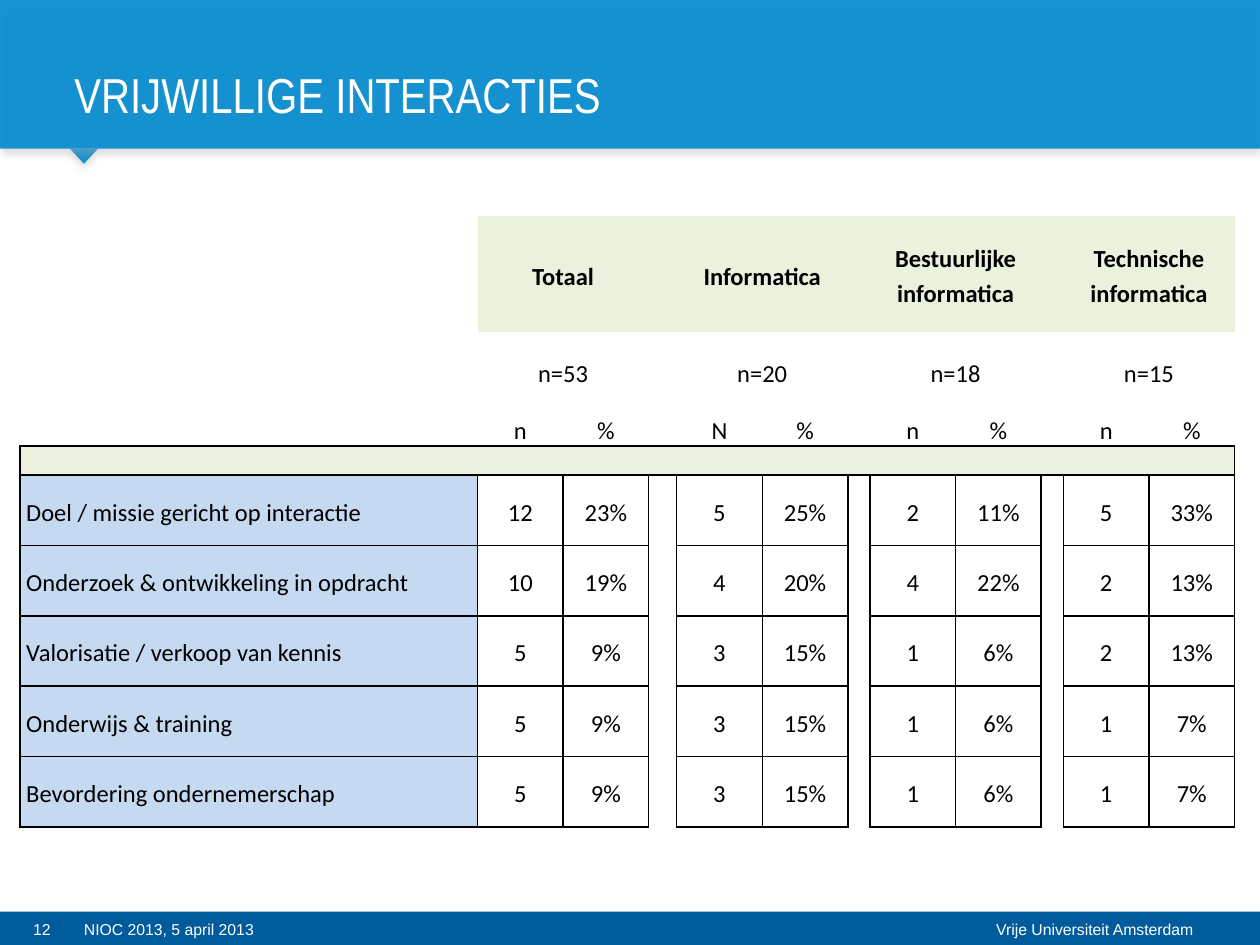
from lxml.etree import SubElement
from pptx import Presentation
from pptx.dml.color import RGBColor
from pptx.enum.shapes import MSO_SHAPE
from pptx.enum.text import MSO_ANCHOR, PP_ALIGN
from pptx.oxml.ns import qn
from pptx.util import Pt

BLACK, WHITE = "000000", "FFFFFF"
HEADER_GREEN, BAND_GREEN, LABEL_BLUE = "EAF1DD", "EBF1DE", "C5D9F1"
TITLE_BLUE, FOOTER_BLUE = "0089CF", "005B9D"

FOOTER_FONT = {"name": "Arial", "size": Pt(9)}
TITLE_FONT = {"name": "Arial Narrow", "size": Pt(28)}
TABLE_FONT = {"name": "Calibri", "size": Pt(14)}

GROUPS = [
    ("Totaal", "n=53", "n"),
    ("Informatica", "n=20", "N"),
    ("Bestuurlijke informatica", "n=18", "n"),
    ("Technische informatica", "n=15", "n"),
]
GROUP_COLUMNS = [1, 4, 7, 10]
GAP_COLUMNS = [3, 6, 9]
BAND_ROW = 3
FIRST_DATA_ROW = 4
COLUMN_WIDTHS = [261.5, 48.9, 48.9, 16, 48.9, 48.9, 12.7, 48.9, 48.9, 12.7, 48.9, 48.9]
ROW_HEIGHTS = [66.3, 32.5, 32.5, 16.6] + [40.2] * 5
DATA = [
    ("Doel / missie gericht op interactie", [(12, 23), (5, 25), (2, 11), (5, 33)]),
    ("Onderzoek & ontwikkeling in opdracht", [(10, 19), (4, 20), (4, 22), (2, 13)]),
    ("Valorisatie / verkoop van kennis", [(5, 9), (3, 15), (1, 6), (2, 13)]),
    ("Onderwijs & training", [(5, 9), (3, 15), (1, 6), (1, 7)]),
    ("Bevordering ondernemerschap", [(5, 9), (3, 15), (1, 6), (1, 7)]),
]


def rgb(color):
    return RGBColor.from_string(color)


def set_attributes(target, values):
    for name, value in values.items():
        setattr(target, name, value)


def write_text(frame, text, font, color, align=PP_ALIGN.LEFT, spacing=None):
    paragraph = frame.paragraphs[0]
    set_attributes(paragraph, {"alignment": align, "line_spacing": spacing})
    run = paragraph.add_run()
    run.text = text
    set_attributes(run.font, font)
    run.font.color.rgb = rgb(color)


def add_block(slide, kind, box, color):
    shape = slide.shapes.add_shape(kind, *map(Pt, box))
    shape.shadow.inherit = False
    shape.fill.solid()
    shape.fill.fore_color.rgb = rgb(color)
    shape.line.fill.background()
    return shape


def add_color(parent, color, alpha):
    element = SubElement(parent, qn("a:srgbClr"), val=color)
    SubElement(element, qn("a:alpha"), val=str(alpha * 1000))


def add_raised_block(slide, kind, box):
    shape = add_block(slide, kind, box, TITLE_BLUE)
    properties = shape._element.spPr
    fill_color = properties.find(qn("a:solidFill")).find(qn("a:srgbClr"))
    SubElement(fill_color, qn("a:alpha"), val="90000")
    shadow = SubElement(
        properties.find(qn("a:effectLst")), qn("a:outerShdw"),
        blurRad=str(Pt(4)), dist=str(Pt(3)), dir="5400000", rotWithShape="0",
    )
    add_color(shadow, "A6A6A6", 40)
    return shape


def add_title(slide, text):
    shape = add_raised_block(slide, MSO_SHAPE.RECTANGLE, (0, 0, 720, 85))
    frame = shape.text_frame
    set_attributes(frame, {
        "word_wrap": True, "vertical_anchor": MSO_ANCHOR.BOTTOM,
        "margin_left": Pt(42.5), "margin_right": 0,
        "margin_top": Pt(14.4), "margin_bottom": Pt(14.4),
    })
    write_text(frame, text, TITLE_FONT, WHITE, spacing=Pt(32))


def add_footer_text(slide, text, left, width, align, margin):
    frame = slide.shapes.add_textbox(Pt(left), Pt(511.2), Pt(width), Pt(28.8)).text_frame
    set_attributes(frame, {
        "word_wrap": True, "vertical_anchor": MSO_ANCHOR.BOTTOM,
        "margin_left": Pt(margin), "margin_right": Pt(margin),
    })
    write_text(frame, text, FOOTER_FONT, WHITE, align)


def border_sides(row, column):
    if row < BAND_ROW:
        return "B" if row == BAND_ROW - 1 else ""
    if row >= FIRST_DATA_ROW and column in GAP_COLUMNS:
        return "LRT" if row == FIRST_DATA_ROW else "LR"
    return "LRTB"


def cell_color(row, column):
    if row == BAND_ROW:
        return BAND_GREEN
    if row == 0 and column > 0:
        return HEADER_GREEN
    if row >= FIRST_DATA_ROW and column == 0:
        return LABEL_BLUE
    return None


def format_cell(cell, row, column):
    properties = cell._tc.get_or_add_tcPr()
    sides = border_sides(row, column)
    for side in "LRTB":
        line = SubElement(properties, qn(f"a:ln{side}"), w=str(Pt(1)))
        if side in sides:
            add_color(SubElement(line, qn("a:solidFill")), BLACK, 100)
        else:
            SubElement(line, qn("a:noFill"))
    color = cell_color(row, column)
    if color:
        cell.fill.solid()
        cell.fill.fore_color.rgb = rgb(color)
    else:
        cell.fill.background()
    set_attributes(cell, {
        "margin_left": Pt(3.6), "margin_right": Pt(3.6),
        "margin_top": 0, "margin_bottom": 0,
        "vertical_anchor": MSO_ANCHOR.BOTTOM if row in (1, 2) else MSO_ANCHOR.MIDDLE,
    })


def table_texts():
    texts = {}
    for column, (name, total, count_label) in zip(GROUP_COLUMNS, GROUPS):
        texts[0, column] = name
        texts[1, column] = total
        texts[2, column] = count_label
        texts[2, column + 1] = "%"
    for row, (label, pairs) in enumerate(DATA, FIRST_DATA_ROW):
        texts[row, 0] = label
        for column, (count, percent) in zip(GROUP_COLUMNS, pairs):
            texts[row, column] = str(count)
            texts[row, column + 1] = f"{percent}%"
    return texts


def add_interaction_table(slide):
    table = slide.shapes.add_table(
        len(ROW_HEIGHTS), len(COLUMN_WIDTHS), Pt(11.4), Pt(123.7),
        Pt(sum(COLUMN_WIDTHS)), Pt(sum(ROW_HEIGHTS)),
    ).table
    set_attributes(table, {"first_row": False, "horz_banding": False})
    for column, width in zip(table.columns, COLUMN_WIDTHS):
        column.width = Pt(width)
    for row, height in zip(table.rows, ROW_HEIGHTS):
        row.height = Pt(height)
    texts = table_texts()
    for row in range(len(ROW_HEIGHTS)):
        for column in range(len(COLUMN_WIDTHS)):
            cell = table.cell(row, column)
            format_cell(cell, row, column)
            if (row, column) in texts:
                align = PP_ALIGN.CENTER if column else PP_ALIGN.LEFT
                font = TABLE_FONT | {"bold": row == 0}
                write_text(cell.text_frame, texts[row, column], font, BLACK, align, 1.15)
            else:
                SubElement(cell.text_frame.paragraphs[0]._p, qn("a:endParaRPr"), sz="800")
    for column in GROUP_COLUMNS:
        for row in (0, 1):
            table.cell(row, column).merge(table.cell(row, column + 1))
    table.cell(BAND_ROW, 0).merge(table.cell(BAND_ROW, len(COLUMN_WIDTHS) - 1))


def main():
    presentation = Presentation()
    set_attributes(presentation, {"slide_width": Pt(720), "slide_height": Pt(540)})
    slide = presentation.slides.add_slide(presentation.slide_layouts[6])
    add_block(slide, MSO_SHAPE.RECTANGLE, (0, 521, 720, 20), FOOTER_BLUE)
    pointer = add_raised_block(slide, MSO_SHAPE.ISOSCELES_TRIANGLE, (40, 85, 16, 8.6))
    pointer._element.spPr.xfrm.set("flipV", "1")
    add_title(slide, "VRIJWILLIGE INTERACTIES")
    add_footer_text(slide, "Vrije Universiteit Amsterdam", 442, 247, PP_ALIGN.RIGHT, 7.2)
    add_footer_text(slide, "12", 0, 48, PP_ALIGN.CENTER, 7.2)
    add_footer_text(slide, "NIOC 2013, 5 april 2013", 48, 374.4, PP_ALIGN.LEFT, 0)
    add_interaction_table(slide)
    presentation.save("out.pptx")


if __name__ == "__main__":
    main()
